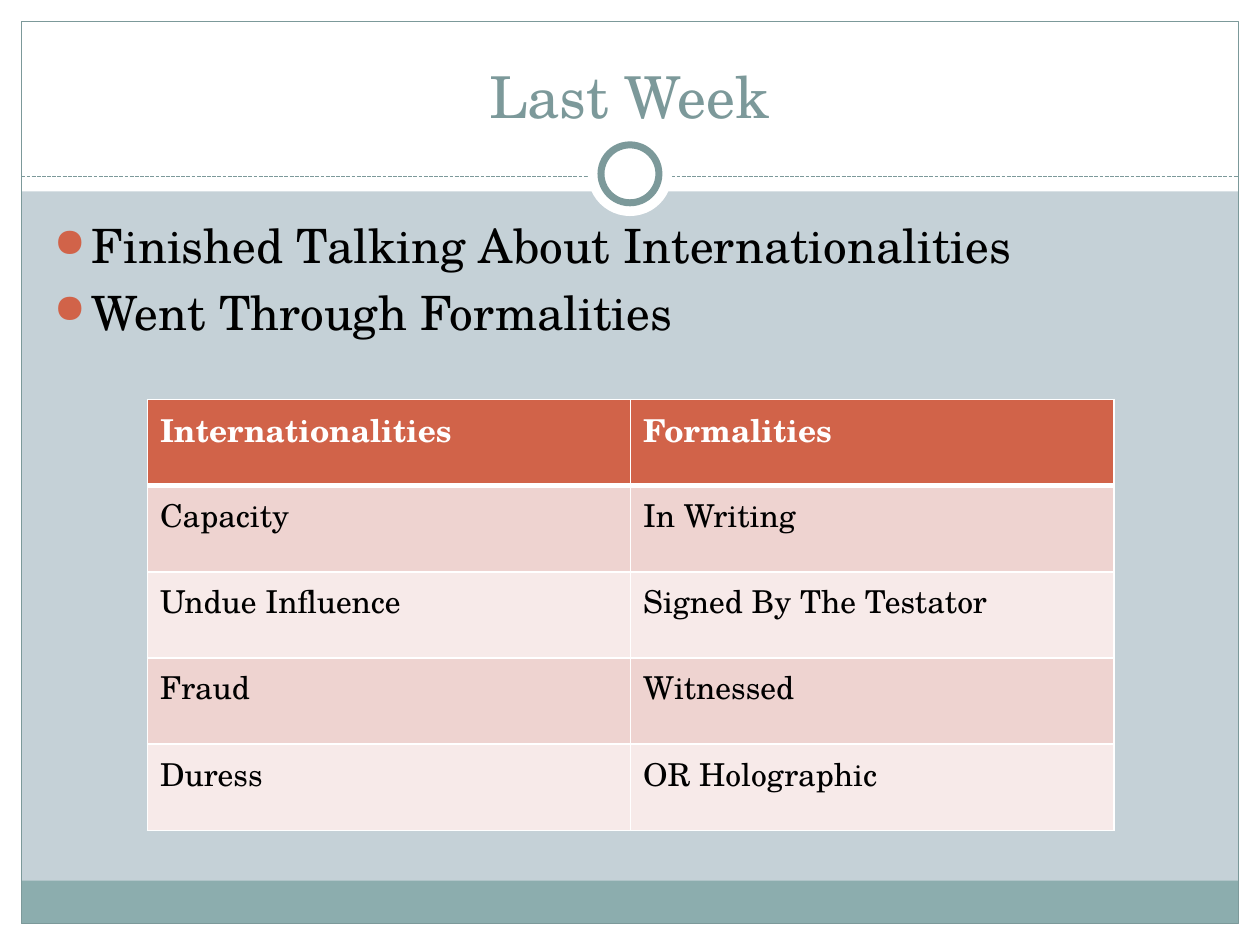
from lxml.etree import SubElement
from pptx import Presentation
from pptx.dml.color import RGBColor
from pptx.enum.dml import MSO_LINE
from pptx.enum.shapes import MSO_CONNECTOR, MSO_SHAPE
from pptx.enum.text import MSO_ANCHOR, PP_ALIGN
from pptx.oxml.ns import qn
from pptx.util import Inches, Pt

FONT = "TeX Gyre Schola"
WHITE, BLACK, TEAL, RUST = "FFFFFF", "000000", "7C999A", "D16349"
BANDS = ["EED3D0", "F7EAE9"]

TITLE = "Last Week"
POINTS = ["Finished Talking About Internationalities", "Went Through Formalities"]
ROWS = [
    ("Internationalities", "Formalities"),
    ("Capacity", "In Writing"),
    ("Undue Influence", "Signed By The Testator"),
    ("Fraud", "Witnessed"),
    ("Duress", "OR Holographic"),
]

WIDE, HIGH, EDGE = 10, 7.5, 0.17
RULE = 1.4
# left, top, width, height, fill
PANELS = [
    (0, HIGH - EDGE, WIDE, EDGE, WHITE),
    (0, 0, WIDE, 1.52, WHITE),
    (0, 0, EDGE, HIGH, WHITE),
    (WIDE - EDGE, 0, EDGE, HIGH, WHITE),
    (EDGE, 6.99, WIDE - 2 * EDGE, 0.34, "8CADAE"),
]


def color(code):
    return RGBColor.from_string(code)


def paint(fill, code):
    fill.solid()
    fill.fore_color.rgb = color(code)


def draw(kind, box, fill=None, line=None, width=0.75):
    shape = slide.shapes.add_shape(kind, *map(Inches, box))
    shape.shadow.inherit = False
    if fill:
        paint(shape.fill, fill)
    else:
        shape.fill.background()
    if line:
        shape.line.color.rgb = color(line)
        shape.line.width = Pt(width)
    else:
        shape.line.fill.background()


def style(para, size, code, bold=False):
    font = para.font
    font.name, font.size, font.bold = FONT, Pt(size), bold
    font.color.rgb = color(code)


def add_text(box, lines):
    frame = slide.shapes.add_textbox(*map(Inches, box)).text_frame
    frame.word_wrap = True
    frame.text = "\n".join(lines)
    return frame


def add_bullet(para):
    props = para._p.get_or_add_pPr()
    props.set("marL", str(Inches(0.3)))
    props.set("indent", str(Inches(-0.3)))
    tint = SubElement(props, qn("a:buClr"))
    SubElement(tint, qn("a:srgbClr"), val=RUST)
    SubElement(props, qn("a:buSzPct"), val="85000")
    SubElement(props, qn("a:buChar"), char="●")


def add_border(cell, side, width):
    line = SubElement(cell._tc.get_or_add_tcPr(), qn("a:ln" + side), w=str(Pt(width)))
    fill = SubElement(line, qn("a:solidFill"))
    SubElement(fill, qn("a:srgbClr"), val=WHITE)


deck = Presentation()
deck.slide_width, deck.slide_height = Inches(WIDE), Inches(HIGH)
slide = deck.slides.add_slide(deck.slide_layouts[6])
paint(slide.background.fill, "C5D1D7")

for *box, fill in PANELS:
    draw(MSO_SHAPE.RECTANGLE, box, fill)
draw(MSO_SHAPE.RECTANGLE, (EDGE, EDGE, WIDE - 2 * EDGE, HIGH - 2 * EDGE), line=TEAL)

rule = slide.shapes.add_connector(
    MSO_CONNECTOR.STRAIGHT, *map(Inches, (EDGE, RULE, WIDE - EDGE, RULE)))
rule.line.color.rgb = color(TEAL)
rule.line.width = Pt(0.75)
rule.line.dash_style = MSO_LINE.SQUARE_DOT
SubElement(rule._element.spPr, qn("a:effectLst"))

for size, line in [(0.67, None), (0.46, TEAL)]:
    box = (WIDE / 2 - size / 2, 1.38 - size / 2, size, size)
    draw(MSO_SHAPE.OVAL, box, WHITE, line, 4)

title = add_text((0.33, 0.25, 9.33, 0.83), [TITLE])
title.vertical_anchor = MSO_ANCHOR.BOTTOM
title.paragraphs[0].alignment = PP_ALIGN.CENTER
style(title.paragraphs[0], 33, TEAL)

for para in add_text((0.33, 1.67, 9.3, 5), POINTS).paragraphs:
    add_bullet(para)
    para.space_before = Pt(5.4)
    style(para, 27, BLACK)

grid = slide.shapes.add_table(
    len(ROWS), 2, *map(Inches, (1.17, 3.17, 7.67, 3.42))).table
for r, row in enumerate(ROWS):
    head = r == 0
    for c, text in enumerate(row):
        cell = grid.cell(r, c)
        cell.text = text
        style(cell.text_frame.paragraphs[0], 18, WHITE if head else BLACK, head)
        for side in "LRTB":
            thick = (head and side == "B") or (r == 1 and side == "T")
            add_border(cell, side, 3 if thick else 1)
        paint(cell.fill, RUST if head else BANDS[(r - 1) % 2])

deck.save("out.pptx")
